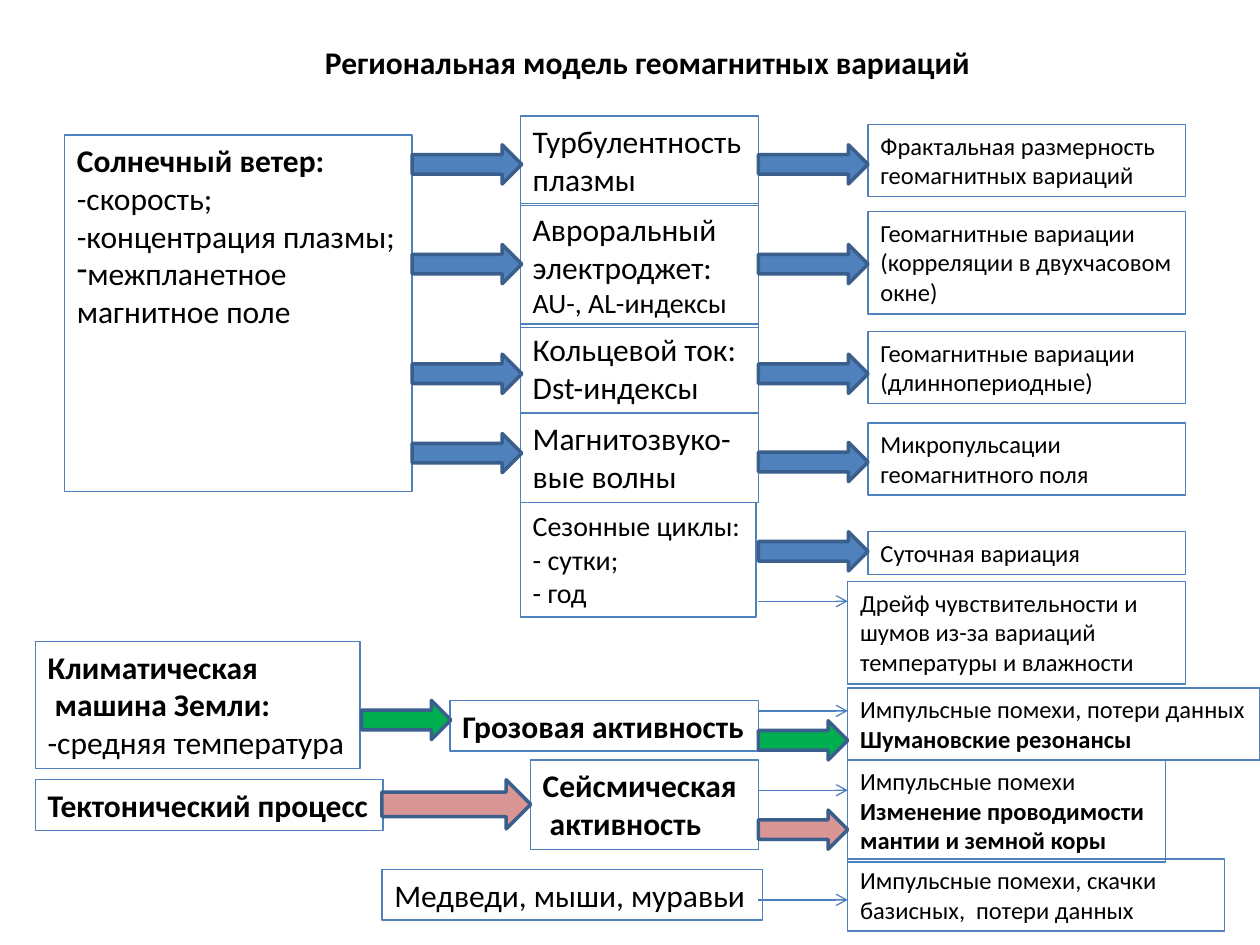
from lxml import etree
from pptx import Presentation
from pptx.dml.color import RGBColor
from pptx.enum import shapes, text
from pptx.oxml import ns
from pptx.util import Cm, Pt

BLUE, EDGE, WIRE = "4F81BD", "3A5F8C", "4B7EBC"
GREEN, PINK = "00B050", "D99694"
MID, GAP, NEAR, FAR = 10.49, 15.29, 17.09, 17.5
SUN_END = 8.31
THICK = 0.79

TITLE = (6.3, 0.74, 13.64, 1.02, 18, ["*Региональная модель геомагнитных вариаций"])

SOURCES = [
    (1.3, 2.72, 7.01, 7.19, 18, ["*Солнечный ветер:", "-скорость;", "-концентрация плазмы;",
                                 "•межпланетное магнитное поле"]),
]
TIGHT = [
    (0.71, 12.93, 6.55, 2.57, 18, ["*Климатическая", "* машина Земли:", "-средняя температура"]),
    (0.71, 15.72, 7.01, 1.02, 18, ["*Тектонический процесс"]),
    (MID, 10.13, 4.75, 2.31, 16, ["Сезонные циклы:", "- сутки;", "- год"]),
    (9.07, 14.12, 6.22, 1.02, 18, ["*Грозовая активность"]),
    (10.69, 15.32, 4.6, 1.8, 18, ["*Сейсмическая", "* активность"]),
    (7.7, 17.53, 7.67, 1.02, 18, ["Медведи, мыши, муравьи"]),
]
DRIVERS = [
    (2.34, 1.8, ["Турбулентность плазмы"]),
    (4.11, 2.49, [[("Авроральный электроджет: ", 18), ("AU-, AL-индексы", 16)]]),
    (6.53, 1.8, ["Кольцевой ток:", "Dst-индексы"]),
    (8.33, 1.8, ["Магнитозвуко-вые волны"]),
]
RESULTS = [
    (2.51, 1.45, "Фрактальная размерность геомагнитных вариаций"),
    (4.27, 2.06, "Геомагнитные вариации (корреляции в двухчасовом окне)"),
    (6.68, 1.45, "Геомагнитные вариации (длиннопериодные)"),
    (8.53, 1.45, "Микропульсации геомагнитного поля"),
    (10.72, 0.86, "Суточная вариация"),
]
EFFECTS = [
    (11.73, 6.81, 2.06, ["Дрейф чувствительности и шумов из-за вариаций температуры и влажности"]),
    (13.87, 8.31, 1.45, ["Импульсные помехи, потери данных", "*Шумановские резонансы"]),
    (15.32, 6.4, 2.06, ["Импульсные помехи", "*Изменение проводимости мантии и земной коры"]),
    (17.32, 7.59, 1.45, ["Импульсные помехи, скачки базисных,  потери данных"]),
]
SUN_ROWS = [2.92, 4.93, 7.14, 8.74]
OUT_ROWS = [2.92, 4.93, 7.14, 8.92, 10.72]
WIRES = [12.12, 14.33, 15.93, 18.14]
ARROWS = [
    (7.29, 14.12, 1.8, THICK, GREEN),
    (GAP, 14.53, 1.8, THICK, GREEN),
    (7.7, 15.72, 3, 0.99, PINK),
    (GAP, 16.33, 1.8, THICK, PINK),
]

deck = Presentation()
deck.slide_width, deck.slide_height = Cm(25.4), Cm(19.05)
slide = deck.slides.add_slide(deck.slide_layouts[6])


def tint(hue):
    return RGBColor.from_string(hue)


def edge(item, hue, width):
    item.line.color.rgb = tint(hue)
    item.line.width = Pt(width)


def write(para, line, size):
    if isinstance(line, str):
        if line[0] == "•":
            props = para._p.get_or_add_pPr()
            props.set("marL", "0")
            props.set("indent", "0")
            etree.SubElement(props, ns.qn("a:buChar")).set("char", "-")
        runs = [(line.lstrip("*•"), size)]
    else:
        runs = line
    for words, points in runs:
        run = para.add_run()
        run.text = words
        run.font.name = "Calibri"
        run.font.size = Pt(points)
        run.font.bold = line[0] == "*"
        run.font.color.rgb = tint("000000")


def box(left, top, width, height, size, lines, wrap=True, frame=True):
    item = slide.shapes.add_textbox(Cm(left), Cm(top), Cm(width), Cm(height))
    if frame:
        edge(item, BLUE, 0.75)
    body = item.text_frame
    body.word_wrap = wrap
    body.vertical_anchor = text.MSO_ANCHOR.TOP
    for i, line in enumerate(lines):
        write(body.add_paragraph() if i else body.paragraphs[0], line, size)


def arrow(left, top, width, height, hue):
    item = slide.shapes.add_shape(shapes.MSO_SHAPE.RIGHT_ARROW,
                                  Cm(left), Cm(top), Cm(width), Cm(height))
    item.shadow.inherit = False
    item.fill.solid()
    item.fill.fore_color.rgb = tint(hue)
    edge(item, EDGE, 2)


def wire(top):
    item = slide.shapes.add_connector(shapes.MSO_CONNECTOR.STRAIGHT,
                                      Cm(GAP), Cm(top), Cm(NEAR), Cm(top))
    edge(item, WIRE, 0.75)
    etree.SubElement(item.line._get_or_add_ln(), ns.qn("a:tailEnd")).set("type", "arrow")
    etree.SubElement(item._element.spPr, ns.qn("a:effectLst"))


box(*TITLE, wrap=False, frame=False)
for spot in SOURCES:
    box(*spot)
for spot in TIGHT:
    box(*spot, wrap=False)
for top, height, lines in DRIVERS:
    box(MID, top, GAP - MID, height, 18, lines)
for top, height, line in RESULTS:
    box(FAR, top, 6.4, height, 14, [line])
for top, width, height, lines in EFFECTS:
    box(NEAR, top, width, height, 14, lines)
for left, rows in ((SUN_END, SUN_ROWS), (GAP, OUT_ROWS)):
    for top in rows:
        arrow(left, top, FAR - GAP, THICK, BLUE)
for spot in ARROWS:
    arrow(*spot)
for top in WIRES:
    wire(top)

deck.save("out.pptx")
